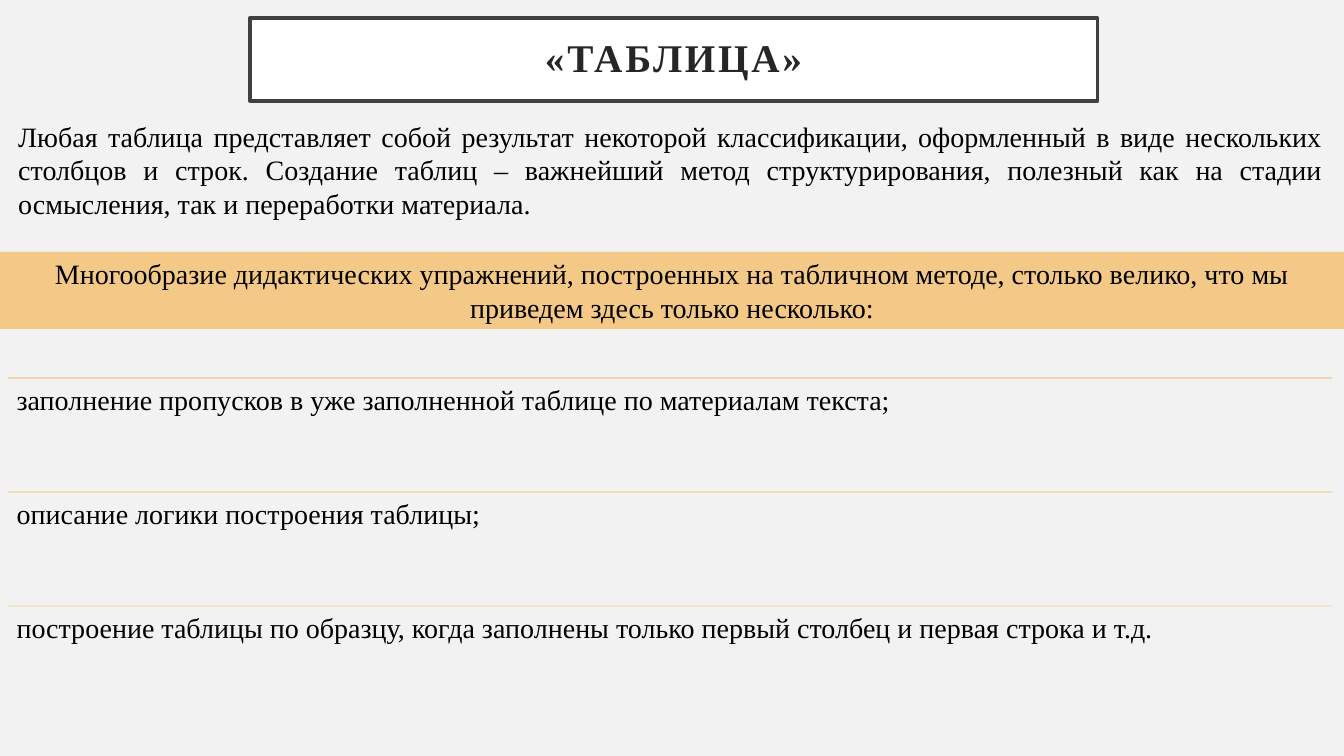
from dataclasses import dataclass

from lxml.etree import SubElement
from pptx import Presentation
from pptx.dml.color import RGBColor
from pptx.enum.shapes import MSO_CONNECTOR as Conn, MSO_SHAPE as Shape
from pptx.enum.text import MSO_ANCHOR as Anchor, MSO_AUTO_SIZE as AutoSize, PP_ALIGN as Align
from pptx.oxml.ns import qn
from pptx.util import Pt

COLORS = {
    "background": "F2F2F2",
    "white": "FFFFFF",
    "frame": "404040",
    "title": "262626",
    "text": "000000",
    "accent": "F6A21D",
}
FONT = "Times New Roman"
SLIDE_W, SLIDE_H = 960, 540
LEFT, WIDTH = 5.8, 946
LIST_TOP, ROW_H = 270, 81.4


@dataclass
class Exercise:
    text: str
    line_opacity: int  # percent


EXERCISES = [
    Exercise("заполнение пропусков в уже заполненной таблице по материалам текста;", 90),
    Exercise("описание логики построения таблицы;", 70),
    Exercise("построение таблицы по образцу, когда заполнены только первый столбец "
             "и первая строка и т.д.", 50),
]


def rgb(name: str) -> RGBColor:
    return RGBColor.from_string(COLORS[name])


def place(sp, left: float, top: float, width: float, height: float) -> None:
    sp.left, sp.top, sp.width, sp.height = Pt(left), Pt(top), Pt(width), Pt(height)


def set_opacity(sp, percent: int) -> None:
    for color in sp._element.spPr.iter(qn("a:srgbClr")):
        SubElement(color, qn("a:alpha"), val=str(percent * 1000))


def write(sp, text: str, align: Align, inset_x: float, inset_y: float, size: float = 20,
          color: str = "text", bold: bool = False, spacing: float = 1.0,
          anchor: Anchor = Anchor.TOP):
    tf = sp.text_frame
    tf.word_wrap = True
    tf.auto_size = AutoSize.NONE
    tf.vertical_anchor = anchor
    tf.margin_left = tf.margin_right = Pt(inset_x)
    tf.margin_top = tf.margin_bottom = Pt(inset_y)
    p = tf.paragraphs[0]
    p.alignment = align
    p.line_spacing = spacing
    p.space_before = Pt(0)
    r = p.add_run()
    r.text = text
    r.font.name = FONT
    r.font.size = Pt(size)
    r.font.bold = bold
    r.font.color.rgb = rgb(color)
    return p


def add_exercise(shapes, top: float, exercise: Exercise) -> None:
    line = shapes.add_connector(Conn.STRAIGHT, Pt(LEFT), Pt(top), Pt(LEFT + WIDTH), Pt(top))
    line.line.color.rgb = rgb("accent")
    line.line.width = Pt(0.5)
    set_opacity(line, exercise.line_opacity)
    SubElement(line._element.spPr, qn("a:effectLst"))
    box = shapes.add_textbox(Pt(LEFT), Pt(top), Pt(WIDTH), Pt(ROW_H))
    write(box, exercise.text, Align.LEFT, 6, 6, spacing=0.9)


def main() -> None:
    prs = Presentation()
    prs.slide_width, prs.slide_height = Pt(SLIDE_W), Pt(SLIDE_H)
    s = prs.slides.add_slide(prs.slide_layouts[1])
    s.background.fill.solid()
    s.background.fill.fore_color.rgb = rgb("background")

    # List of exercises, each under a thin rule
    for i, exercise in enumerate(EXERCISES):
        add_exercise(s.shapes, LIST_TOP + i * ROW_H, exercise)

    # Framed title
    title = s.shapes.title
    place(title, 178.4, 13, 605.6, 59)
    title.fill.solid()
    title.fill.fore_color.rgb = rgb("white")
    title.line.color.rgb = rgb("frame")
    title.line.width = Pt(2.5)
    p = write(title, "«ТАБЛИЦА»", Align.CENTER, 14.4, 14.4, size=28, color="title",
              bold=True, spacing=0.9, anchor=Anchor.MIDDLE)
    p.runs[0].font._element.set("spc", "200")

    # Introduction
    intro = s.placeholders[1]
    place(intro, LEFT, 81.4, WIDTH, 80)
    p = write(intro, "Любая таблица представляет собой результат некоторой классификации, "
              "оформленный в виде нескольких столбцов и строк. Создание таблиц – важнейший "
              "метод структурирования, полезный как на стадии осмысления, так и переработки "
              "материала.", Align.JUSTIFY, 7.2, 3.6)
    pPr = p._p.get_or_add_pPr()
    pPr.set("marL", "0")
    pPr.set("indent", "0")
    SubElement(pPr, qn("a:buNone"))

    # Translucent band leading into the list
    band = s.shapes.add_shape(Shape.RECTANGLE, Pt(0), Pt(180), Pt(SLIDE_W), Pt(55))
    band.shadow.inherit = False
    band.fill.solid()
    band.fill.fore_color.rgb = rgb("accent")
    set_opacity(band, 50)
    band.line.fill.background()
    write(band, "Многообразие дидактических упражнений, построенных на табличном методе, "
          "столько велико, что мы приведем здесь только несколько:", Align.CENTER, 7.2, 3.6)

    prs.save("out.pptx")


if __name__ == "__main__":
    main()
